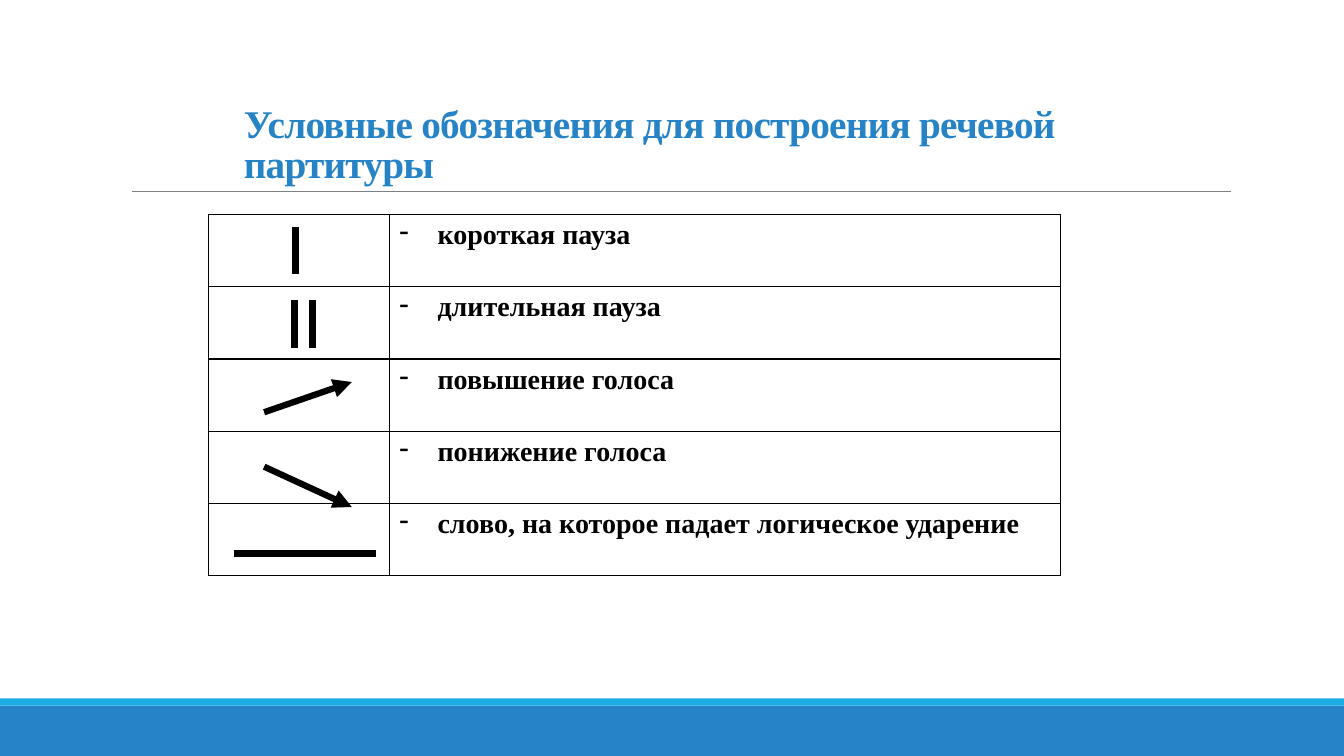
from lxml import etree
from pptx import Presentation
from pptx.dml.color import RGBColor
from pptx.enum.shapes import MSO_CONNECTOR, MSO_SHAPE
from pptx.enum.text import MSO_ANCHOR
from pptx.oxml.ns import qn
from pptx.util import Inches, Pt

LINE = MSO_CONNECTOR.STRAIGHT
RECT = MSO_SHAPE.RECTANGLE
TOP, BOTTOM = MSO_ANCHOR.TOP, MSO_ANCHOR.BOTTOM
BLUE = RGBColor(0x26, 0x83, 0xC6)
CYAN = RGBColor(0x1C, 0xAD, 0xE4)
GRAY = RGBColor(0x80, 0x80, 0x80)
BLACK = RGBColor(0, 0, 0)
FONT = "Times New Roman"
TITLE = "Условные обозначения для построения речевой партитуры"
SIGNS = [
    "короткая пауза",
    "длительная пауза",
    "повышение голоса",
    "понижение голоса",
    "слово, на которое падает логическое ударение",
]
PAUSES = [(2.93, 2.25), (2.92, 2.98), (3.1, 2.98)]
PITCHES = [(4.09, 3.79), (4.63, 5.03)]


def style(para, size, color):
    """Set the bold serif font of a paragraph."""
    font = para.font
    font.name, font.size, font.bold = FONT, Pt(size), True
    font.color.rgb = color


def add_band(slide, top, height, color):
    """Add a full-width footer band."""
    band = slide.shapes.add_shape(
        RECT, 0, Inches(top), Inches(13.33), Inches(height))
    band.shadow.inherit = False
    band.fill.solid()
    band.fill.fore_color.rgb = color
    band.line.fill.background()


def add_line(slide, start, end, color=BLACK, width=4.5, arrow=False):
    """Add a straight line, with an arrowhead at its end if asked."""
    line = slide.shapes.add_connector(LINE, *map(Inches, start + end))
    line.line.color.rgb = color
    line.line.width = Pt(width)
    props = line._element.spPr
    if arrow:
        etree.SubElement(props.find(qn("a:ln")), qn("a:tailEnd"), type="triangle")
    etree.SubElement(props, qn("a:effectLst"))


def add_title(slide):
    """Add the slide title."""
    box = slide.shapes.add_textbox(
        Inches(2.32), Inches(0.31), Inches(8.31), Inches(1.59))
    frame = box.text_frame
    frame.word_wrap = True
    frame.vertical_anchor = BOTTOM
    para = frame.paragraphs[0]
    run = para.add_run()
    run.text = TITLE
    run._r.get_or_add_rPr().set("spc", "-50")
    para.line_spacing = 0.85
    style(para, 28, BLUE)


def add_border(cell):
    """Draw thin black borders around a cell."""
    props = cell._tc.get_or_add_tcPr()
    for spot, side in enumerate(("lnL", "lnR", "lnT", "lnB")):
        edge = etree.Element(qn(f"a:{side}"), w=str(Pt(1)))
        fill = etree.SubElement(edge, qn("a:solidFill"))
        etree.SubElement(fill, qn("a:srgbClr"), val=str(BLACK))
        props.insert(spot, edge)


def add_dash(para):
    """Give a paragraph a hanging dash bullet."""
    props = para._p.get_or_add_pPr()
    props.set("marL", str(Inches(0.38)))
    props.set("indent", str(Inches(-0.38)))
    props.insert(0, etree.Element(qn("a:buChar"), char="-"))


def add_key(slide):
    """Add the table that explains the signs."""
    table = slide.shapes.add_table(
        len(SIGNS), 2, Inches(2.07), Inches(2.13), Inches(8.45), Inches(3.58)).table
    table.first_row = table.horz_banding = False
    for col, width in zip(table.columns, (1.79, 6.66)):
        col.width = Inches(width)
    for row, sign in enumerate(SIGNS):
        para = table.cell(row, 1).text_frame.paragraphs[0]
        para.text = sign
        style(para, 20, BLACK)
        add_dash(para)
    for cell in table.iter_cells():
        cell.vertical_anchor = TOP
        cell.fill.background()
        add_border(cell)


def main():
    """Build and save the slide."""
    deck = Presentation()
    deck.slide_width, deck.slide_height = Inches(13.33), Inches(7.5)
    slide = deck.slides.add_slide(deck.slide_layouts[6])
    add_band(slide, 7, 0.5, BLUE)
    add_band(slide, 6.93, 0.07, CYAN)
    add_line(slide, (1.31, 1.9), (12.21, 1.9), GRAY, 0.5)
    add_title(slide)
    add_key(slide)
    for left, top in PAUSES:
        add_line(slide, (left, top), (left, top + 0.47))
    for start, end in PITCHES:
        add_line(slide, (2.62, start), (3.49, end), arrow=True)
    add_line(slide, (3.73, 5.49), (2.32, 5.49))
    deck.save("out.pptx")


if __name__ == "__main__":
    main()
